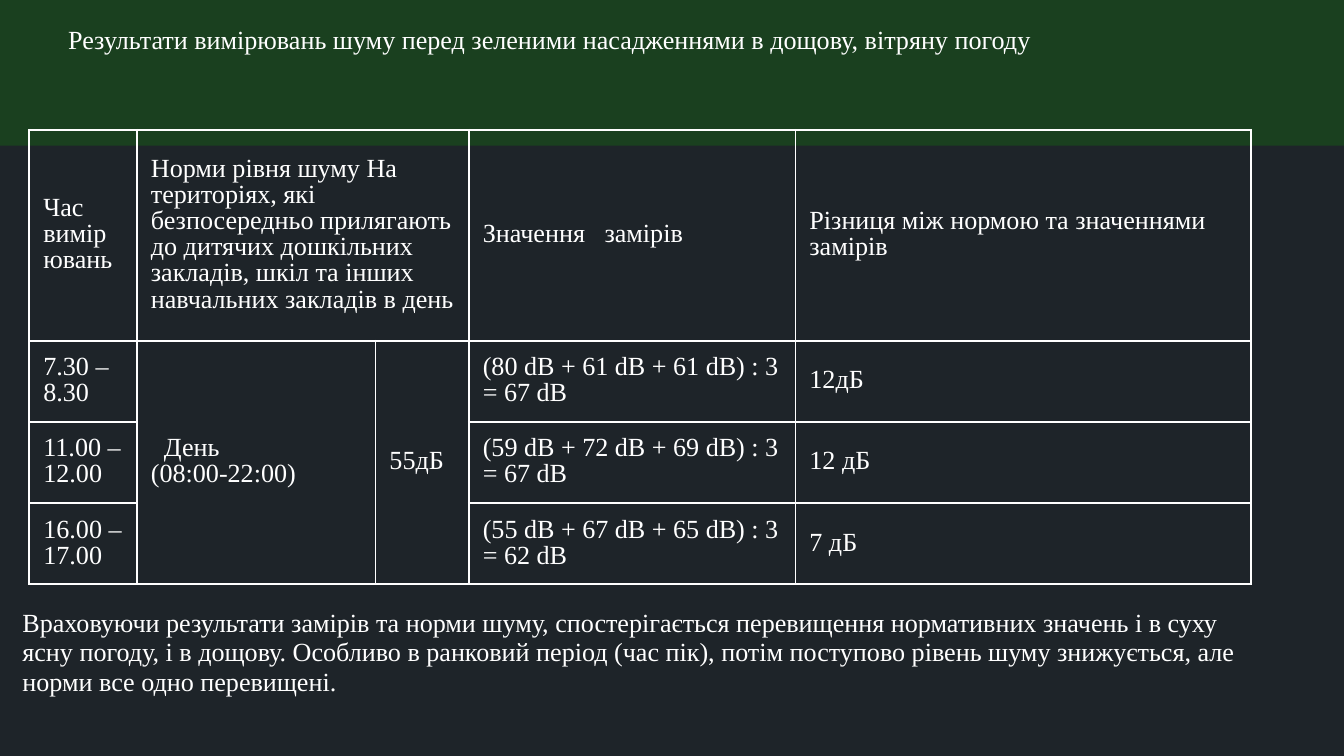
from lxml.etree import SubElement
from pptx import Presentation
from pptx.dml.color import RGBColor
from pptx.enum.shapes import MSO_SHAPE as Shape
from pptx.enum.text import MSO_ANCHOR as Anchor
from pptx.oxml.ns import qn
from pptx.util import Pt

FONT = "Times New Roman"
WHITE, DARK, GREEN = "FFFFFF", "1E2429", "1A401F"
COLUMN_WIDTHS = [115.2, 255.6, 100, 350, 488]
ROW_HEIGHTS = [226, 87, 87, 87]
CELL_MARGIN = 15
MERGES = [((0, 1), (0, 2)), ((1, 1), (3, 1)), ((1, 2), (3, 2))]
ROWS = [
    ["Час вимірювань",
     "Норми рівня шуму На територіях, які безпосередньо прилягають до дитячих "
     "дошкільних закладів, шкіл та інших навчальних закладів в день",
     "", "Значення   замірів", "Різниця між нормою та значеннями замірів"],
    ["7.30 – 8.30", "  День\n(08:00-22:00)", "55дБ",
     "(80 dB + 61 dB + 61 dB) : 3 = 67 dB", "12дБ"],
    ["11.00 – 12.00", "", "", "(59 dB + 72 dB + 69 dB) : 3 = 67 dB", "12 дБ"],
    ["16.00 – 17.00", "", "", "(55 dB + 67 dB + 65 dB) : 3 = 62 dB", "7 дБ"],
]
TITLE = "Результати вимірювань шуму перед зеленими насадженнями в дощову, вітряну погоду"
CONCLUSION = (
    "Враховуючи результати замірів та норми шуму, спостерігається перевищення "
    "нормативних значень і в суху ясну погоду, і в дощову. Особливо в ранковий "
    "період (час пік), потім поступово рівень шуму знижується, але норми все одно "
    "перевищені."
)


def color(hex_string):
    return RGBColor.from_string(hex_string)


def set_margins(target, margin):
    target.margin_left = target.margin_right = Pt(margin)
    target.margin_top = target.margin_bottom = Pt(margin)


def write(text_frame, text, line_spacing=None):
    text_frame.text = text
    text_frame.word_wrap = True
    for paragraph in text_frame.paragraphs:
        paragraph.font.name = FONT
        paragraph.font.size = Pt(28)
        paragraph.font.color.rgb = color(WHITE)
        if line_spacing:
            paragraph.line_spacing = Pt(line_spacing)


def add_band(slide, top, height, fill):
    band = slide.shapes.add_shape(Shape.RECTANGLE, Pt(-18), Pt(top), Pt(1461.6), Pt(height))
    band.shadow.inherit = False
    band.fill.solid()
    band.fill.fore_color.rgb = color(fill)
    band.line.fill.background()


def add_text(slide, left, top, width, height, text, line_spacing=None):
    box = slide.shapes.add_textbox(Pt(left), Pt(top), Pt(width), Pt(height))
    write(box.text_frame, text, line_spacing)
    return box


def add_borders(cell):
    properties = cell._tc.get_or_add_tcPr()
    for side in ("L", "R", "T", "B"):
        line = SubElement(properties, qn(f"a:ln{side}"), w=str(Pt(2.25)))
        fill = SubElement(line, qn("a:solidFill"))
        SubElement(fill, qn("a:srgbClr"), val=WHITE)


def add_noise_table(slide, left, top):
    table = slide.shapes.add_table(
        len(ROWS), len(COLUMN_WIDTHS), Pt(left), Pt(top),
        Pt(sum(COLUMN_WIDTHS)), Pt(sum(ROW_HEIGHTS))).table
    table.first_row = table.horz_banding = False
    for column, width in zip(table.columns, COLUMN_WIDTHS):
        column.width = Pt(width)
    for row, height, texts in zip(table.rows, ROW_HEIGHTS, ROWS):
        row.height = Pt(height)
        for cell, text in zip(row.cells, texts):
            write(cell.text_frame, text, 28)
            set_margins(cell, CELL_MARGIN)
            cell.vertical_anchor = Anchor.MIDDLE
            add_borders(cell)
            cell.fill.background()
    for first, last in MERGES:
        table.cell(*first).merge(table.cell(*last))


def main():
    presentation = Presentation()
    presentation.slide_width, presentation.slide_height = Pt(1440), Pt(810)
    slide = presentation.slides.add_slide(presentation.slide_layouts[6])
    add_band(slide, 133.2, 676.8, DARK)
    add_band(slide, 0, 156, GREEN)
    add_noise_table(slide, 31.5, 139)
    conclusion = add_text(slide, 24, 652, 1325, 94, CONCLUSION, 31.4)
    set_margins(conclusion.text_frame, 0)
    add_text(slide, 66, 21, 1290, 41, TITLE)
    presentation.save("out.pptx")


if __name__ == "__main__":
    main()
